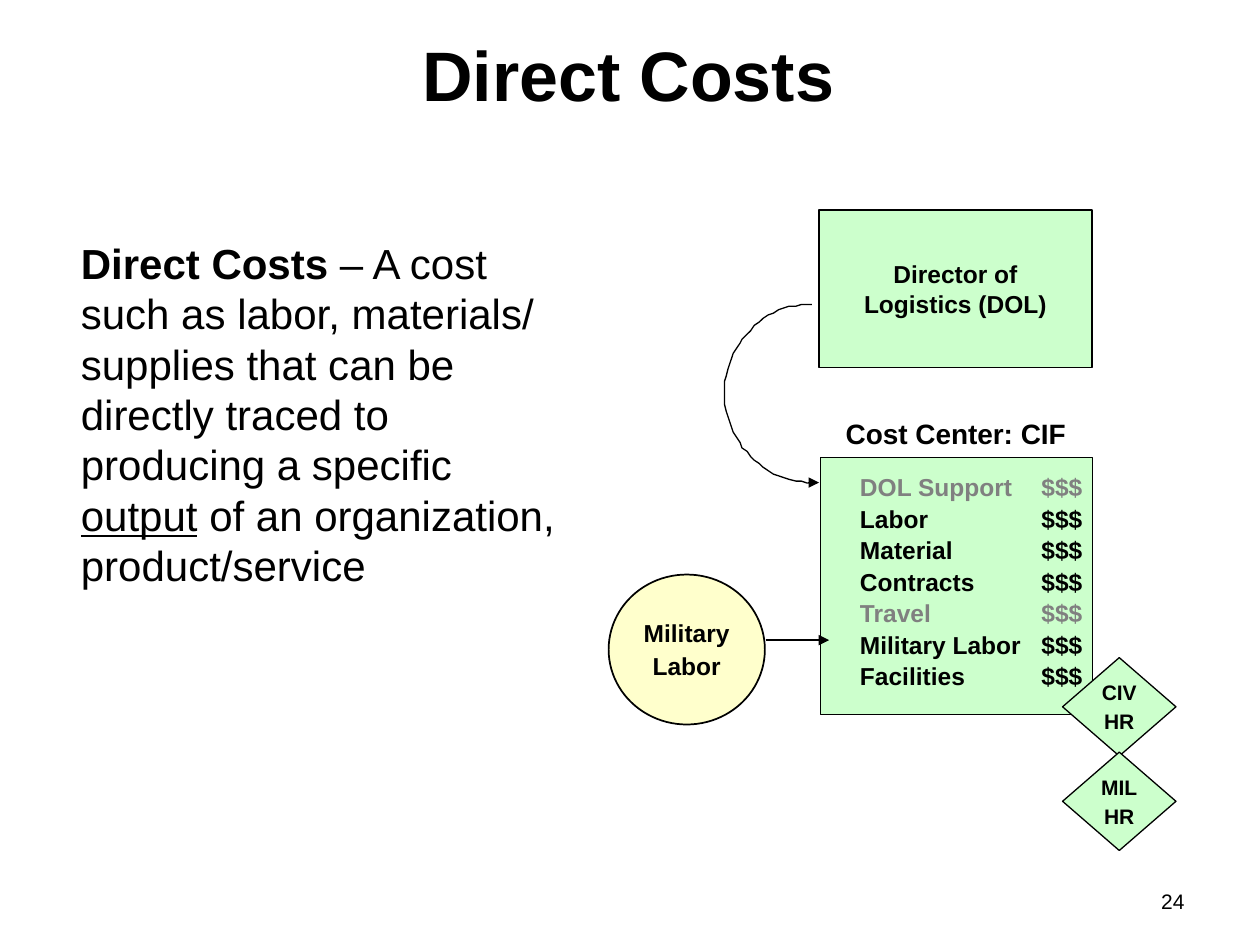
import math
from lxml import etree
from pptx import Presentation
from pptx import util as u
from pptx.dml.color import RGBColor
from pptx.enum import shapes, text
from pptx.oxml import ns

Pt = u.Pt
MID, TOP = text.MSO_ANCHOR.MIDDLE, text.MSO_ANCHOR.TOP
LEFT, MAIN, RIGHT = text.PP_ALIGN.LEFT, text.PP_ALIGN.CENTER, text.PP_ALIGN.RIGHT
KIND = shapes.MSO_SHAPE
GREEN, CREAM, BLACK, GREY = "CCFFCC", "FFFFCC", "000000", "808080"


def rgb(code):
    return RGBColor.from_string(code)


def put(item, **vals):
    for name, val in vals.items():
        setattr(item, name, val)


def node(root, tag, **attrs):
    return etree.SubElement(root, ns.qn(tag), attrs)


class Page:
    def __init__(self, deck, face="Arial"):
        self.slide = deck.slides.add_slide(deck.slide_layouts[1])
        self.items = self.slide.shapes
        self.face = face

    def words(self, item, paras, size, bold=True, hue=BLACK, align=MAIN,
              anchor=TOP, pad=(7.2, 3.6), wrap=True, after=0, tab=None):
        """Fill item with paras, each a list of (words, extra font values)."""
        frame = item.text_frame
        put(frame, word_wrap=wrap, vertical_anchor=anchor,
            auto_size=text.MSO_AUTO_SIZE.NONE,
            margin_left=Pt(pad[0]), margin_right=Pt(pad[0]),
            margin_top=Pt(pad[1]), margin_bottom=Pt(pad[1]))
        for i, runs in enumerate(paras):
            para = frame.add_paragraph() if i else frame.paragraphs[0]
            put(para, alignment=align, space_before=Pt(0), space_after=Pt(after))
            if tab:
                tabs = node(para._p.get_or_add_pPr(), "a:tabLst")
                node(tabs, "a:tab", pos=str(Pt(tab)), algn="l")
            for part, extra in runs:
                run = para.add_run()
                run.text = part
                look = dict(name=self.face, size=Pt(size), bold=bold) | extra
                put(run.font, **look)
                run.font.color.rgb = rgb(hue)

    def fill(self, role, box, paras, size, **look):
        """Move and fill the placeholder numbered role."""
        item = self.slide.placeholders[role]
        left, top, width, height = map(Pt, box)
        put(item, left=left, top=top, width=width, height=height)
        self.words(item, paras, size, **look)
        return item

    def label(self, box, line, size, **look):
        item = self.items.add_textbox(*map(Pt, box))
        self.words(item, [[(line, {})]], size, **look)

    def shape(self, kind, box, hue, lines=(), size=14, weight=0.75, **look):
        item = self.items.add_shape(kind, *map(Pt, box))
        item.shadow.inherit = False
        item.fill.solid()
        item.fill.fore_color.rgb = rgb(hue)
        self.edge(item, weight)
        if lines:
            paras = [[(line, {})] for line in lines]
            self.words(item, paras, size, anchor=MID, wrap=False, **look)

    def edge(self, item, weight):
        item.line.color.rgb = rgb(BLACK)
        item.line.width = Pt(weight)

    def curve(self, points, weight=0.75):
        pen = self.items.build_freeform(*points[0], scale=Pt(1))
        pen.add_line_segments(points[1:], close=False)
        item = pen.convert_to_shape()
        item.shadow.inherit = False
        item.fill.background()
        self.edge(item, weight)

    def arrow(self, start, end, y, weight):
        item = self.items.add_connector(
            shapes.MSO_CONNECTOR.STRAIGHT, Pt(start), Pt(y), Pt(end), Pt(y))
        self.edge(item, weight)
        props = item._element.spPr
        node(props.find(ns.qn("a:ln")), "a:tailEnd", type="triangle")
        node(props, "a:effectLst")


def main():
    deck = Presentation()
    put(deck, slide_width=Pt(720), slide_height=Pt(540))
    page = Page(deck)

    page.label((516, 504, 168, 29), "24", 12, bold=False, align=RIGHT)
    body = page.fill(1, (12, 132, 324, 192), [[
        ("Direct Costs ", {"bold": True}),
        ("– A cost such as labor, materials/ supplies that can be directly "
         "traced to producing a specific ", {}),
        ("output", {"underline": True}),
        (" of an organization, product/service", {}),
    ]], 24, bold=False, align=LEFT)
    props = body.text_frame.paragraphs[0]._p.get_or_add_pPr()
    props.set("marL", str(Pt(27)))
    props.set("indent", "0")
    node(props, "a:buNone")
    page.fill(0, (95, 18, 528, 65.5), [[("Direct Costs", {})]], 40, pad=(7.2, 0))

    page.shape(KIND.RECTANGLE, (468.7, 261.4, 155.5, 147), GREEN)
    page.label((473.8, 234.7, 144.7, 26.6), "Cost Center: CIF", 16)
    page.shape(KIND.OVAL, (347.8, 328.3, 89.3, 85.7), CREAM,
               ["Military", "Labor"], weight=1, after=2)
    page.shape(KIND.RECTANGLE, (468, 120, 156, 90), GREEN,
               ["Director of", "Logistics (DOL)"])
    for i, staff in enumerate(["CIV", "MIL"]):
        page.shape(KIND.DIAMOND, (607.2, 375.8 + 54 * i, 64.8, 56.2), GREEN,
                   [staff, "HR"], size=12, after=2, pad=(0, 0))

    steps = 48
    turns = [math.pi * i / steps for i in range(steps + 1)]
    bend = [(464.5 - 50.5 * math.sin(t), 224.7 - 51.1 * math.cos(t)) for t in turns]
    page.curve(bend + [(467, 275.8)])
    page.arrow(462, 468, 275.8, 0.75)
    page.arrow(437.8, 473.8, 365.8, 1)

    costs = ["DOL Support", "Labor", "Material", "Contracts", "Travel",
             "Military Labor", "Facilities"]
    for i, cost in enumerate(costs):
        hue = GREY if cost in ("DOL Support", "Travel") else BLACK
        page.label((468, 270 + 18 * i, 174, 16.6), cost + "\t$$$", 14,
                   hue=hue, pad=(7.2, 0), tab=103.7)

    deck.save("out.pptx")


if __name__ == "__main__":
    main()
